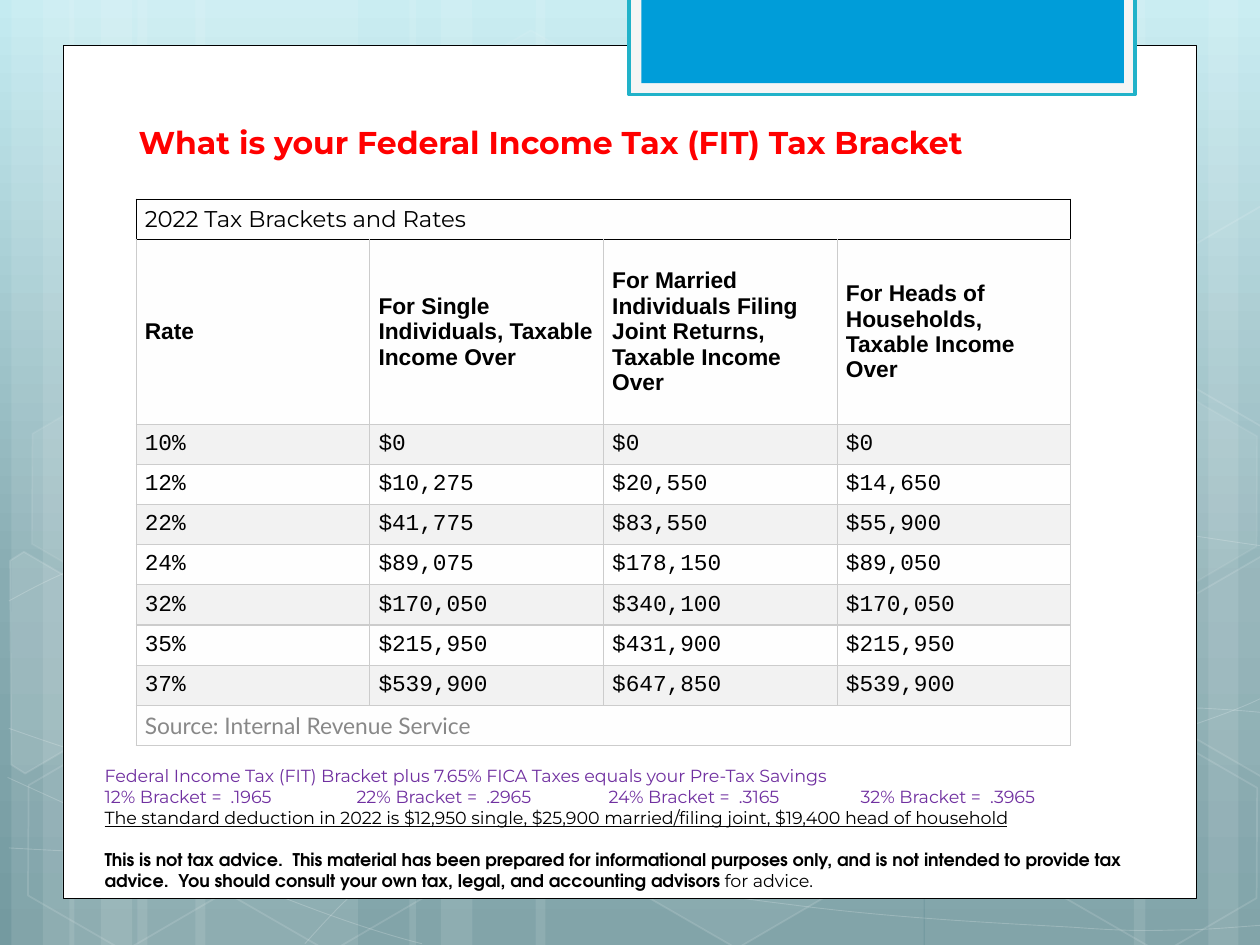
import copy

import pptx
import pptx.dml.color
import pptx.enum.shapes
import pptx.enum.text
import pptx.oxml
import pptx.oxml.ns
import pptx.util

RGBColor = pptx.dml.color.RGBColor
Inches = pptx.util.Inches
Pt = pptx.util.Pt
qn = pptx.oxml.ns.qn
SHAPE = pptx.enum.shapes.MSO_SHAPE
ANCHOR = pptx.enum.text.MSO_ANCHOR
ALIGN = pptx.enum.text.PP_ALIGN

WHITE = RGBColor(0xFF, 0xFF, 0xFF)
BLACK = RGBColor(0, 0, 0)
RED = RGBColor(0xFF, 0, 0)
PURPLE = RGBColor(0x70, 0x30, 0xA0)
GRAY = RGBColor(0x88, 0x88, 0x88)
PALE = RGBColor(0xF5, 0xF5, 0xF5)
TEAL = RGBColor(0x21, 0xB2, 0xC9)
BLUE = RGBColor(0x00, 0x9D, 0xD9)
BAND = RGBColor(0xF2, 0xF2, 0xF2)
PLAIN = RGBColor(0xFE, 0xFE, 0xFE)
RULE = RGBColor(0xCC, 0xCC, 0xCC)
SKY = [(0, RGBColor(0xC4, 0xEB, 0xF1)), (0.62, RGBColor(0x88, 0xAC, 0xB2)),
       (1, RGBColor(0x74, 0x9A, 0xA0))]

STRIPES = [(1.09, 1.75), (0.09, 0.5), (0.34, 0.83), (1.55, 1.75), (0.55, 0.5), (0.8, 0.83),
           (7.34, 1.75), (9.59, 0.5), (9, 0.83), (4.25, 3.08), (3.25, 0.5), (3.5, 0.83)]
CURVES = [
    [(0.07, 6.73), (0.61, 6.76), (1.15, 6.79), (1.9, 6.78), (2.65, 6.77), (3.58, 6.75),
     (4.58, 6.65), (5.58, 6.55), (7, 6.36), (7.92, 6.17), (8.83, 5.98), (9.77, 5.68),
     (10.07, 5.51)],
    [(0.07, 4.77), (0.36, 4.61), (0.65, 4.46), (1.21, 4.31), (1.78, 4.16), (2.59, 3.94),
     (3.47, 3.87), (4.36, 3.8), (5.44, 3.79), (6.54, 3.87), (7.64, 3.95), (9.47, 4.26),
     (10.07, 4.34)],
    [(0.06, 6.17), (1.27, 6.72), (2.47, 7.27), (3.35, 7.49)],
    [(0.07, 5.78), (0.38, 5.89), (0.7, 6), (1.28, 6.16), (1.86, 6.31), (2.73, 6.56),
     (3.57, 6.73), (4.4, 6.9), (5.45, 7.08), (6.28, 7.18), (7.11, 7.29), (8, 7.33),
     (8.53, 7.36), (9.06, 7.4), (9.19, 7.38), (9.45, 7.38), (9.71, 7.37), (9.89, 7.35),
     (10.07, 7.34)],
    [(2.42, 7.49), (2.6, 7.29), (2.78, 7.09), (3.02, 6.91), (3.26, 6.72), (3.6, 6.53),
     (3.88, 6.39), (4.16, 6.25), (4.33, 6.19), (4.69, 6.09), (5.06, 5.99), (5.73, 5.85),
     (6.08, 5.78), (6.44, 5.71), (6.49, 5.71), (6.8, 5.69), (7.11, 5.66), (7.6, 5.63),
     (7.94, 5.62), (8.29, 5.61), (8.86, 5.62), (8.86, 5.62), (9.08, 5.62), (9.31, 5.62),
     (9.53, 5.62), (9.71, 5.63), (9.88, 5.64), (10.06, 5.66)],
]
HEXAGONS = [(3.34, 0.36, 4, 8), (4.97, 5.89, 6, 12), (0.11, 5.91, 0, 12), (0.14, 3.12, 7, 8),
            (1.74, 5.92, 0, 12), (7.53, 4.53, 10, 12), (8.34, 5.93, 0, 12), (8.34, 3.14, 7, 8)]
CUT_HEXAGONS = [
    ([(0.08, 4.45), (0.19, 4.38), (0.96, 4.83), (0.95, 5.7), (0.2, 6.14), (0.09, 6.07)], 10),
    ([(9.26, 4.85), (10.02, 4.41), (10.09, 4.46), (10.09, 6.13), (10.02, 6.17), (9.26, 5.73)], 4),
    ([(9.26, 2.07), (10.02, 1.63), (10.1, 1.68), (10.09, 3.35), (10.02, 3.39), (9.26, 2.95)], 0),
]
HEADINGS = ["Rate", "For Single Individuals, Taxable Income Over",
            "For Married Individuals Filing Joint Returns, Taxable Income Over",
            "For Heads of Households, Taxable Income Over"]
BRACKETS = [
    ("10%", "$0", "$0", "$0"),
    ("12%", "$10,275", "$20,550", "$14,650"),
    ("22%", "$41,775", "$83,550", "$55,900"),
    ("24%", "$89,075", "$178,150", "$89,050"),
    ("32%", "$170,050", "$340,100", "$170,050"),
    ("35%", "$215,950", "$431,900", "$215,950"),
    ("37%", "$539,900", "$647,850", "$539,900"),
]


def paint(shape, fill=None, opacity=100, line=None, width=1, line_opacity=100):
    shape.shadow.inherit = False
    for part, color, percent in ((shape.fill, fill, opacity), (shape.line.fill, line, line_opacity)):
        if color is None or percent == 0:
            part.background()
            continue
        part.solid()
        part.fore_color.rgb = color
    if line is not None:
        shape.line.width = Pt(width)
    properties = shape.element.spPr
    outline = properties.find(qn("a:ln"))
    for owner, percent in ((properties, opacity), (outline, line_opacity)):
        solid = owner.find(qn("a:solidFill"))
        if solid is not None and percent < 100:
            solid[0].append(solid.makeelement(qn("a:alpha"), {"val": str(percent * 1000)}))


def add_block(page, box, kind=SHAPE.RECTANGLE):
    return page.shapes.add_shape(kind, *(Inches(value) for value in box))


def add_outline(page, points, close):
    places = [(Inches(x), Inches(y)) for x, y in points]
    builder = page.shapes.build_freeform(*places[0])
    builder.add_line_segments(places[1:], close=close)
    return builder.convert_to_shape()


def add_curve(page, controls):
    shape = add_outline(page, controls, False)
    lines = list(shape.element.iter(qn("a:lnTo")))
    for start in range(0, len(lines), 3):
        bend = lines[start].makeelement(qn("a:cubicBezTo"), {})
        lines[start].addprevious(bend)
        for line in lines[start:start + 3]:
            bend.append(line[0])
            line.getparent().remove(line)
    return shape


def draw_backdrop(page, height):
    fill = page.background.fill
    fill.gradient()
    fill.gradient_angle = 270
    stops = page.element.find(".//" + qn("a:gsLst"))
    stops.insert(1, copy.deepcopy(stops[0]))
    for stop, (position, color) in zip(fill.gradient_stops, SKY):
        stop.position = position
        stop.color.rgb = color
    for left, width in STRIPES:
        paint(add_block(page, (left, 0, width, height)), WHITE, 10)
    for controls in CURVES:
        paint(add_curve(page, controls), line=WHITE, width=0.5, line_opacity=20)
    for left, top, opacity, line_opacity in HEXAGONS:
        hexagon = add_block(page, (left, top, 1.75, 1.52), SHAPE.HEXAGON)
        hexagon.adjustments[0] = 0.285
        hexagon.rotation = 30
        paint(hexagon, WHITE, opacity, WHITE, 1, line_opacity)
    for points, opacity in CUT_HEXAGONS:
        paint(add_outline(page, points, True), WHITE, opacity, WHITE, 1, 12)


def draw_panel(page, left, top, width, height):
    paint(add_block(page, (left, top, width, height)), WHITE, line=BLACK, width=0.5)
    paint(add_block(page, (left + 4.49, -0.02, 4.02, 0.77)), PALE, line=TEAL, width=2)
    paint(add_block(page, (left + 4.59, -0.02, 3.83, 0.68)), BLUE)


def style(target, name, size, color, bold=False):
    font = target.font
    font.name, font.size, font.bold = name, Pt(size), bold
    font.color.rgb = color


def write_title(holder, box):
    holder.left, holder.top, holder.width, holder.height = (Inches(value) for value in box)
    holder.element.getparent().append(holder.element)
    frame = holder.text_frame
    frame.word_wrap = True
    frame.auto_size = pptx.enum.text.MSO_AUTO_SIZE.NONE
    frame.vertical_anchor = ANCHOR.MIDDLE
    para = frame.paragraphs[0]
    para.text = "What is your Federal Income Tax (FIT) Tax Bracket"
    para.alignment = ALIGN.LEFT
    style(para, "Montserrat", 18, RED, True)


def write_notes(page, box):
    frame = page.shapes.add_textbox(*(Inches(value) for value in box)).text_frame
    frame.word_wrap = True
    frame.margin_left = Inches(0.17)
    lines = [
        ("Federal Income Tax (FIT) Bracket plus 7.65% FICA Taxes equals your Pre-Tax Savings", PURPLE),
        ("12% Bracket =  .1965\t22% Bracket =  .2965\t24% Bracket =  .3165\t32% Bracket =  .3965", PURPLE),
        ("The standard deduction in 2022 is $12,950 single, $25,900 married/filing joint, "
         "$19,400 head of household", BLACK),
        ("This is not tax advice.  This material has been prepared for informational purposes only, "
         "and is not intended to provide tax advice.  You should consult your own tax, legal, and "
         "accounting advisors ", BLACK)]
    for index, (text, color) in enumerate(lines):
        para = frame.paragraphs[0] if index == 0 else frame.add_paragraph()
        para.text = text
        para.space_before = Pt(12 if index == 3 else 0)
        if "\t" in text:
            properties = para._p.get_or_add_pPr()
            tabs = properties.makeelement(qn("a:tabLst"), {})
            for column in (1, 2, 3):
                tabs.append(tabs.makeelement(qn("a:tab"), {"pos": str(Inches(2 * column)), "algn": "l"}))
            properties.append(tabs)
        style(para, "Montserrat", 10, color)
        para.font.underline = index == 2
    style(para.runs[0], "TeX Gyre Adventor", 10, BLACK, True)
    para.add_run().text = "for advice."


def fill_cell(cell, text, fill, name, color=BLACK, bold=False, edges=(RULE,) * 4):
    cell.fill.solid()
    cell.fill.fore_color.rgb = fill
    cell.vertical_anchor = ANCHOR.MIDDLE
    cell.margin_left = cell.margin_right = Inches(0.07)
    cell.margin_top = cell.margin_bottom = Inches(0.03)
    para = cell.text_frame.paragraphs[0]
    para.text = text
    style(para, name, 13, color, bold)
    properties = cell._tc.get_or_add_tcPr()
    for index, (tag, edge) in enumerate(zip(("lnL", "lnR", "lnT", "lnB"), edges)):
        properties.insert(index, pptx.oxml.parse_xml(
            f'<a:{tag} xmlns:a="http://schemas.openxmlformats.org/drawingml/2006/main" w="9525">'
            f'<a:solidFill><a:srgbClr val="{edge}"/></a:solidFill></a:{tag}>'))


def draw_table(page, left, top, width, height, heading_height=1.47):
    rows = [("2022 Tax Brackets and Rates", "", "", ""), HEADINGS, *BRACKETS,
            ("Source: Internal Revenue Service", "", "", "")]
    last = len(rows) - 1
    table = page.shapes.add_table(len(rows), 4, *(Inches(v) for v in (left, top, width, height))).table
    looks = {0: ("Montserrat", BLACK), 1: ("Arial", BLACK, True), last: ("Lato", GRAY)}
    borders = {0: (BLACK,) * 4, 1: (RULE, RULE, BLACK, RULE)}
    for index, texts in enumerate(rows):
        table.rows[index].height = Inches(
            heading_height if index == 1 else (height - heading_height) / last)
        name, color, *bold = looks.get(index, ("Courier New", BLACK))
        banded = 1 < index < last and index % 2 == 0
        for column, text in enumerate(texts):
            fill_cell(table.cell(index, column), text, BAND if banded else PLAIN,
                      name, color, bool(bold), borders.get(index, (RULE,) * 4))
    for index in (0, last):
        table.cell(index, 0).merge(table.cell(index, 3))


def main():
    deck = pptx.Presentation()
    deck.slide_width, deck.slide_height = Inches(10), Inches(7.5)
    page = deck.slides.add_slide(deck.slide_layouts[5])
    draw_backdrop(page, 7.5)
    draw_panel(page, 0.5, 0.36, 9, 6.77)
    write_title(page.shapes.title, (1, 0.93, 7.58, 0.4))
    write_notes(page, (0.66, 6.02, 8.69, 1.11))
    draw_table(page, 1.08, 1.58, 7.42, 4.34)
    deck.save("out.pptx")


if __name__ == "__main__":
    main()
